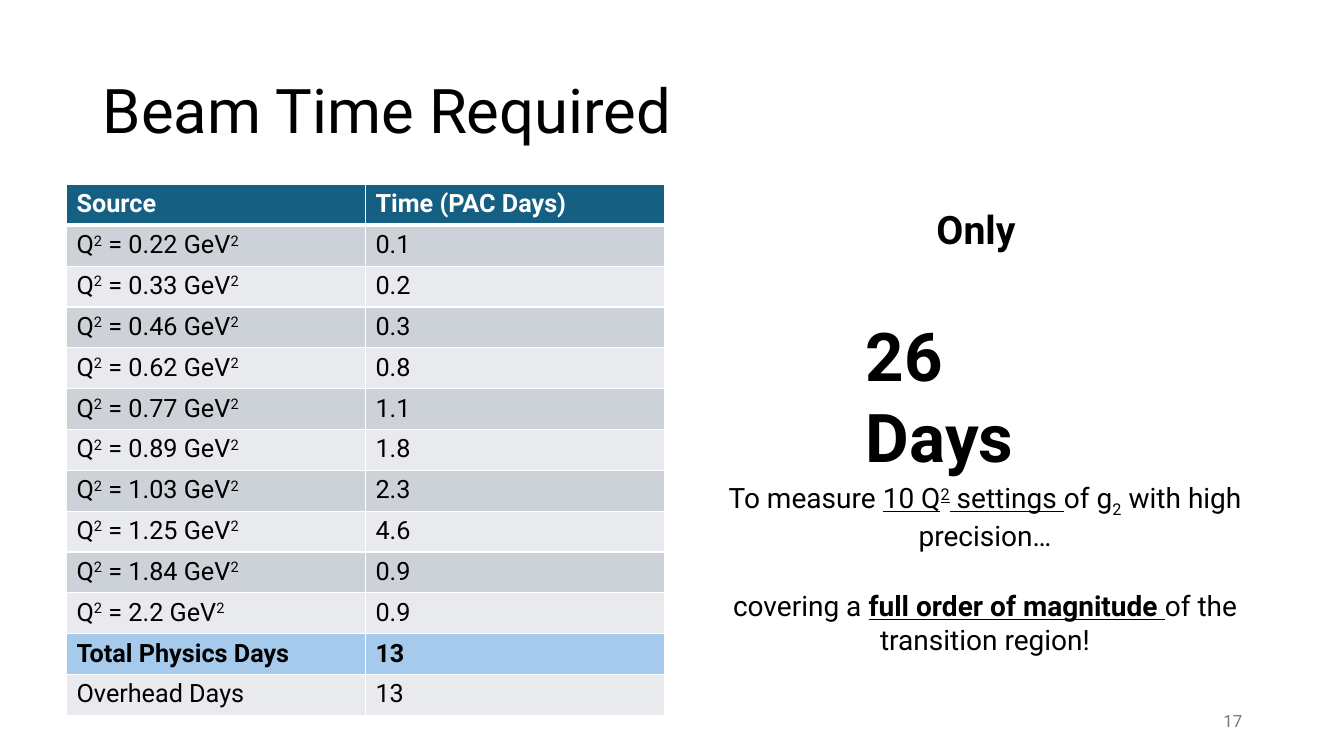
from lxml import etree
from pptx import Presentation
from pptx import util as u
from pptx.dml.color import RGBColor
from pptx.enum import text as t
from pptx.oxml.ns import qn

BLACK, WHITE, GREY = "000000", "FFFFFF", "797979"
HEAD, TOTAL, BANDS = "156082", "A6CAEC", ("CCD2D8", "E8EAED")
LEFT, MID, RIGHT = t.PP_ALIGN.LEFT, t.PP_ALIGN.CENTER, t.PP_ALIGN.RIGHT
SHIFT = {"^": "30000", "_": "-25000"}


def color(code):
    return RGBColor.from_string(code)


class Deck:
    def __init__(self, font, wide, high):
        self.font = font
        self.prs = Presentation()
        self.prs.slide_width = u.Inches(wide)
        self.prs.slide_height = u.Inches(high)
        self.slide = self.prs.slides.add_slide(self.prs.slide_layouts[5])

    def box(self, x, y, w, h):
        """Turn percentages of the slide's size into lengths."""
        wide, high = self.prs.slide_width, self.prs.slide_height
        return [int(part * side / 100)
                for part, side in zip((x, y, w, h), (wide, high, wide, high))]

    def typeset(self, para, runs, size, ink=BLACK, bold=False, align=LEFT):
        """Fill a paragraph from (text, marks): b bold, u underline, ^ raised, _ lowered."""
        para.alignment = align
        font = para.font
        font.name, font.size, font.bold = self.font, u.Pt(size), bold
        font.color.rgb = color(ink)
        for words, marks in runs:
            run = para.add_run()
            run.text = words
            if "b" in marks:
                run.font.bold = True
            if "u" in marks:
                run.font.underline = True
            for mark in SHIFT.keys() & set(marks):
                run._r.get_or_add_rPr().set("baseline", SHIFT[mark])

    def title(self, words, area, size):
        shape = self.slide.shapes.title
        shape.left, shape.top, shape.width, shape.height = self.box(*area)
        frame = shape.text_frame
        frame.auto_size = t.MSO_AUTO_SIZE.NONE
        frame.vertical_anchor = t.MSO_ANCHOR.MIDDLE
        para = frame.paragraphs[0]
        para.line_spacing = 0.9
        self.typeset(para, [(words, "")], size)

    def label(self, paras, area, size, gap=0, wrap=True, inset=0.1,
              anchor=t.MSO_ANCHOR.TOP, **style):
        frame = self.slide.shapes.add_textbox(*self.box(*area)).text_frame
        frame.word_wrap = wrap
        frame.margin_right = u.Inches(inset)
        frame.vertical_anchor = anchor
        for i, runs in enumerate(paras):
            para = frame.add_paragraph() if i else frame.paragraphs[0]
            if i:
                para.space_before = u.Pt(gap)
            self.typeset(para, runs, size, **style)

    def edge(self, cell, low):
        """Draw white borders, the bottom one low points wide."""
        props = cell._tc.get_or_add_tcPr()
        for side, width in zip("LRTB", (1, 1, 1, low)):
            line = etree.SubElement(props, qn(f"a:ln{side}"), w=str(u.Pt(width)))
            fill = etree.SubElement(line, qn("a:solidFill"))
            etree.SubElement(fill, qn("a:srgbClr"), val=WHITE)

    def table(self, rows, area, size):
        """Build a table from rows of (cells, fill, ink, bold)."""
        x, y, w, h = self.box(*area)
        grid = self.slide.shapes.add_table(len(rows), 2, x, y, w, h).table
        grid.horz_banding = False
        for i, (cells, fill, ink, bold) in enumerate(rows):
            grid.rows[i].height = h // len(rows)
            for j, runs in enumerate(cells):
                cell = grid.cell(i, j)
                self.edge(cell, 1 if i else 3)
                cell.fill.solid()
                cell.fill.fore_color.rgb = color(fill)
                self.typeset(cell.text_frame.paragraphs[0], runs, size, ink, bold)


def plain(*words):
    return [[(word, "")] for word in words]


def main():
    deck = Deck("Roboto", 13.33, 7.5)
    deck.title("Beam Time Required", (6.9, 5.33, 86.27, 19.33), 44)

    days = {"0.22": "0.1", "0.33": "0.2", "0.46": "0.3", "0.62": "0.8",
            "0.77": "1.1", "0.89": "1.8", "1.03": "2.3", "1.25": "4.6",
            "1.84": "0.9", "2.2": "0.9"}
    rows = [(plain("Source", "Time (PAC Days)"), HEAD, WHITE, True)]
    for i, (value, time) in enumerate(days.items()):
        source = [("Q", ""), ("2", "^"), (f" = {value} GeV", ""), ("2", "^")]
        rows.append(([source, [(time, "")]], BANDS[i % 2], BLACK, False))
    rows.append((plain("Total Physics Days", "13"), TOTAL, BLACK, True))
    rows.append((plain("Overhead Days", "13"), BANDS[1], BLACK, False))
    deck.table(rows, (4.95, 24.4, 44.49, 70.27), 18)

    deck.label(plain("26 Days"), (63.69, 40.93, 19.35, 12.13), 48,
               inset=0.4, bold=True)
    deck.label([
        [("To measure ", ""), ("10 Q", "u"), ("2", "u^"), (" settings ", "u"),
         ("of g", ""), ("2", "_"), (" with high precision…", "")],
        [("covering a ", ""), ("full order of magnitude ", "bu"),
         ("of the transition region!", "")],
    ], (51.54, 62.93, 43.51, 22.27), 20, gap=26, align=MID)
    deck.label(plain("Only"), (68.94, 26.53, 7.73, 7.6), 28,
               wrap=False, bold=True)
    deck.label(plain("17"), (70.67, 92.67, 22.5, 5.33), 12,
               anchor=t.MSO_ANCHOR.MIDDLE, ink=GREY, align=RIGHT)
    deck.prs.save("out.pptx")


if __name__ == "__main__":
    main()
